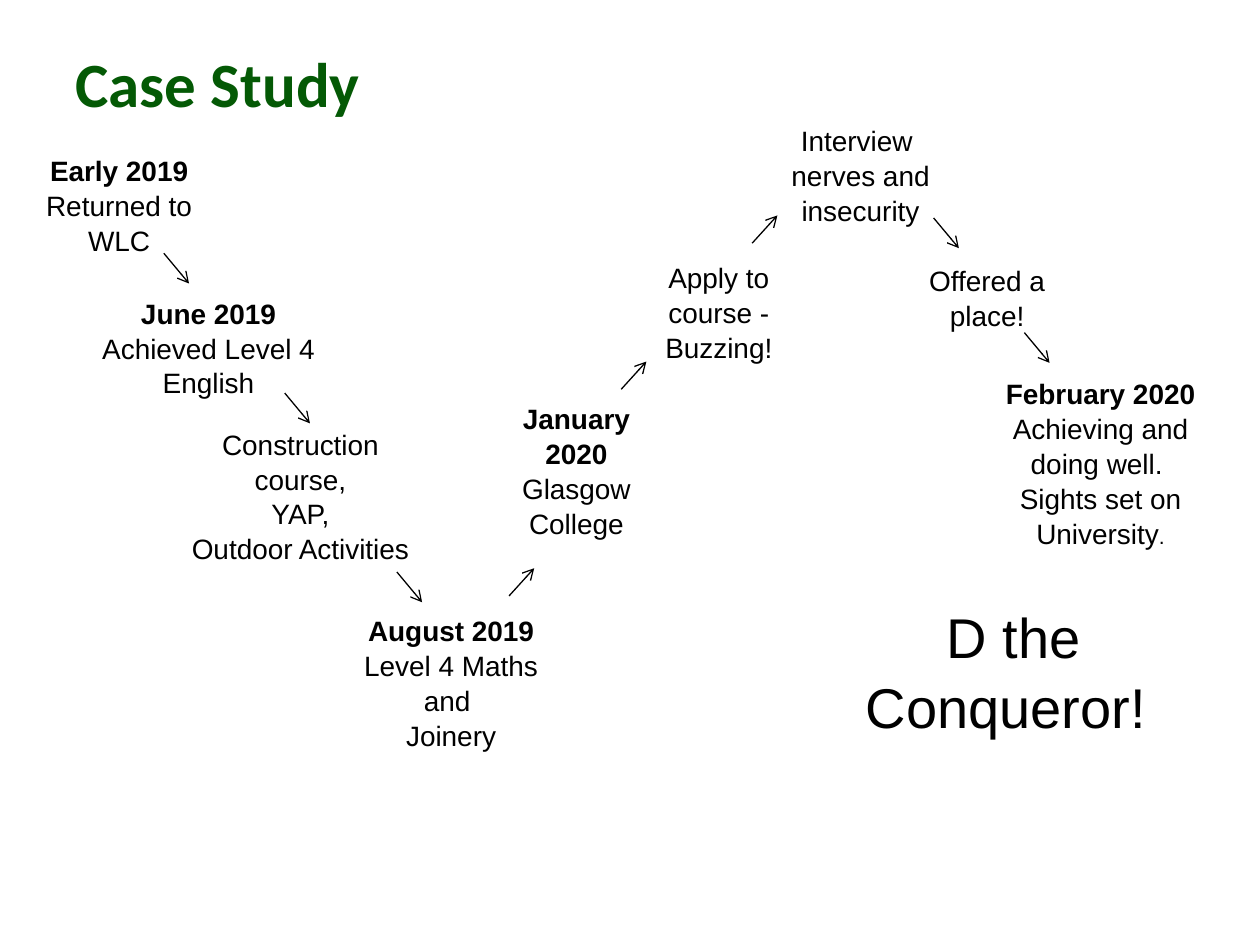
from lxml import etree
from pptx import Presentation
from pptx.dml.color import RGBColor
from pptx.enum.shapes import MSO_CONNECTOR as Connector
from pptx.enum.text import MSO_ANCHOR as Anchor, PP_ALIGN as Align
from pptx.oxml.ns import qn
from pptx.util import Inches, Pt

COLOURS = {"ink": "000000", "title": "045905"}

BODY = {"name": "Arial", "size": Pt(16), "bold": False}
STRONG = {**BODY, "bold": True}
SMALL = {**BODY, "size": Pt(12)}
SLOGAN = {**BODY, "size": Pt(32)}
TITLE = {"name": "Calibri", "size": Pt(36), "bold": True}

# Each step: left, top, width, height, then paragraphs of (text, style) spans
STEPS = [
    (0, 1.16, 1.89, 1.31, [[("Early 2019", STRONG)], [("Returned to WLC", BODY)]]),
    (0.7, 2.29, 1.91, 1.31, [[("June 2019 ", STRONG), ("Achieved Level 4 English", BODY)]]),
    (1.4, 3.33, 1.97, 1.38, [[("Construction course,", BODY)], [("YAP,", BODY)],
                             [("Outdoor Activities", BODY)]]),
    (2.59, 4.81, 1.98, 1.38, [[("August 2019", STRONG)], [("Level 4 Maths and ", BODY)],
                              [("Joinery", BODY)]]),
    (3.84, 3.13, 1.47, 1.38, [[("January 2020", STRONG)], [("Glasgow College", BODY)]]),
    (4.97, 2.01, 1.47, 1.11, [[("Apply to course -\nBuzzing!", BODY)]]),
    (6.16, 0.92, 1.34, 1.11, [[("Interview ", BODY)], [("nerves and insecurity", BODY)]]),
    (6.97, 2.03, 1.73, 0.84, [[("Offered a place!", BODY)]]),
    (7.75, 2.93, 1.97, 1.85, [[("February 2020", STRONG)], [("Achieving and doing well. ", BODY)],
                              [("Sights set on University", BODY), (".", SMALL)]]),
]

ARROW_RUN = 0.2
FALL, RISE = 0.24, -0.22
ARROWS = [
    (1.3, 2.01, FALL), (2.26, 3.12, FALL), (3.15, 4.54, FALL),
    (4.04, 4.73, RISE), (4.93, 3.09, RISE), (5.97, 1.93, RISE),
    (7.41, 1.73, FALL), (8.13, 2.64, FALL),
]


def add_spans(para, spans, colour):
    """Add styled runs; a newline in a text becomes a line break."""
    for text, style in spans:
        for index, line in enumerate(text.split("\n")):
            if index:
                para.add_line_break()
            span = para.add_run()
            span.text = line
            for name, value in style.items():
                setattr(span.font, name, value)
            span.font.color.rgb = RGBColor.from_string(COLOURS[colour])


def add_text(page, left, top, width, height, paragraphs,
             align=Align.CENTER, colour="ink", spacing=1.04):
    box = page.shapes.add_textbox(Inches(left), Inches(top), Inches(width), Inches(height))
    frame = box.text_frame
    frame.word_wrap = True
    frame.vertical_anchor = Anchor.TOP
    for index, spans in enumerate(paragraphs):
        para = frame.add_paragraph() if index else frame.paragraphs[0]
        para.alignment = align
        para.line_spacing = spacing
        add_spans(para, spans, colour)


def add_arrow(page, left, top, drop):
    arrow = page.shapes.add_connector(
        Connector.STRAIGHT, Inches(left), Inches(top),
        Inches(left + ARROW_RUN), Inches(top + drop))
    arrow.line.width = Pt(0.75)
    arrow.line.color.rgb = RGBColor.from_string(COLOURS["ink"])
    etree.SubElement(arrow.line._get_or_add_ln(), qn("a:tailEnd"), type="arrow")
    etree.SubElement(arrow._element.spPr, qn("a:effectLst"))


def main():
    deck = Presentation()
    deck.slide_width, deck.slide_height = Inches(10), Inches(7.5)
    page = deck.slides.add_slide(deck.slide_layouts[6])

    add_text(page, 6.73, 4.71, 2.63, 1.72, [[("D the\nConqueror! ", SLOGAN)]])
    for step in STEPS:
        add_text(page, *step)
    for arrow in ARROWS:
        add_arrow(page, *arrow)
    add_text(page, 0.5, 0.3, 9, 1.25, [[("Case Study", TITLE)]],
             align=Align.LEFT, colour="title", spacing=1.0)

    deck.save("out.pptx")


if __name__ == "__main__":
    main()
